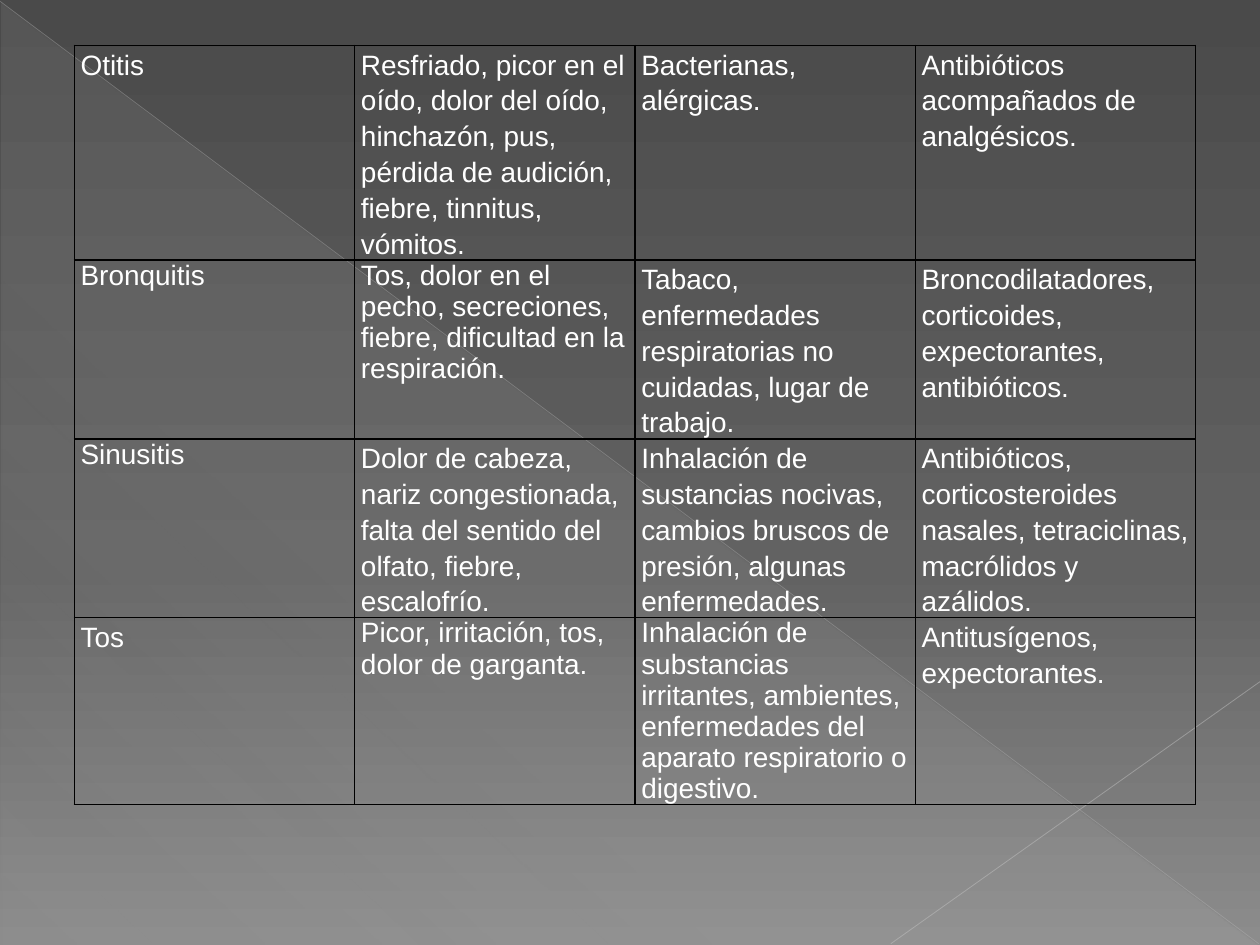
from pptx import Presentation
from pptx.dml.color import RGBColor
from pptx.enum.shapes import MSO_CONNECTOR, MSO_SHAPE
from pptx.oxml import parse_xml
from pptx.oxml.ns import nsdecls, qn
from pptx.util import Inches, Pt
from lxml.etree import SubElement

COLORS = {
    "top": "4A4A4A",
    "middle": "626262",
    "bottom": "8C8C8C",
    "sheen": "D2D2D2",
    "diagonal": "BFBFBF",
    "corner": "C6C6C6",
    "border": "000000",
    "text": "FFFFFF",
}
FONT = "Arial"
LOOSE = 1.15
SINGLE = 1.0

ROWS = [
    (1.7, [
        ("Otitis", LOOSE),
        ("Resfriado, picor en el oído, dolor del oído, hinchazón, pus, pérdida de audición, "
         "fiebre, tinnitus, vómitos.", LOOSE),
        ("Bacterianas, alérgicas.", LOOSE),
        ("Antibióticos acompañados de analgésicos.", LOOSE),
    ]),
    (1.42, [
        ("Bronquitis", SINGLE),
        ("Tos, dolor en el pecho, secreciones, fiebre, dificultad en la respiración.", SINGLE),
        ("Tabaco, enfermedades respiratorias no cuidadas, lugar de trabajo.", LOOSE),
        ("Broncodilatadores, corticoides, expectorantes, antibióticos.", LOOSE),
    ]),
    (1.42, [
        ("Sinusitis", SINGLE),
        ("Dolor de cabeza, nariz congestionada, falta del sentido del olfato, fiebre, "
         "escalofrío.", LOOSE),
        ("Inhalación de sustancias nocivas, cambios bruscos de presión, algunas "
         "enfermedades.", LOOSE),
        ("Antibióticos, corticosteroides nasales, tetraciclinas, macrólidos y azálidos.", LOOSE),
    ]),
    (1.48, [
        ("Tos", LOOSE),
        ("Picor, irritación, tos, dolor de garganta.", SINGLE),
        ("Inhalación de substancias irritantes, ambientes, enfermedades del aparato "
         "respiratorio o digestivo.", SINGLE),
        ("Antitusígenos, expectorantes.", LOOSE),
    ]),
]


def set_gradient(properties, stops, angle):
    """Replace the solid fill in properties by a linear gradient of (position, color, opacity)."""
    stop_xml = "".join(
        f'<a:gs pos="{position * 1000}"><a:srgbClr val="{COLORS[color]}">'
        f'<a:alpha val="{opacity * 1000}"/></a:srgbClr></a:gs>'
        for position, color, opacity in stops
    )
    gradient = parse_xml(
        f'<a:gradFill {nsdecls("a")} rotWithShape="1"><a:gsLst>{stop_xml}</a:gsLst>'
        f'<a:lin ang="{angle * 60000}" scaled="0"/></a:gradFill>'
    )
    properties.replace(properties.find(qn("a:solidFill")), gradient)


def add_background(slide):
    """Shade the slide from dark at the top to light at the bottom."""
    slide.background.fill.solid()
    properties = slide.element.find(".//" + qn("p:bgPr"))
    set_gradient(properties, [(0, "top", 100), (60, "middle", 100), (100, "bottom", 100)], 90)


def add_sheen(slide, left, top, width, height):
    """Add the faint triangle that fills the lower left half of the box."""
    triangle = slide.shapes.add_shape(
        MSO_SHAPE.RIGHT_TRIANGLE, Inches(left), Inches(top), Inches(width), Inches(height)
    )
    triangle.shadow.inherit = False
    triangle.line.fill.background()
    triangle.fill.solid()
    set_gradient(
        triangle.element.spPr, [(0, "sheen", 10), (70, "sheen", 8), (100, "sheen", 1)], 133
    )


def add_hairline(slide, start, end, color, width, opacity):
    """Draw a thin translucent line from start to end."""
    line = slide.shapes.add_connector(
        MSO_CONNECTOR.STRAIGHT, *(Inches(value) for value in (*start, *end))
    )
    line.line.width = Pt(width)
    line.line.color.rgb = RGBColor.from_string(COLORS[color])
    properties = line.element.spPr
    color_element = properties.find(".//" + qn("a:srgbClr"))
    SubElement(color_element, qn("a:alpha"), val=str(opacity * 1000))
    SubElement(properties, qn("a:effectLst"))


def write_text(text_frame, text, size=16, color="text", spacing=SINGLE):
    """Write one formatted paragraph into the text frame."""
    paragraph = text_frame.paragraphs[0]
    paragraph.line_spacing = spacing
    run = paragraph.add_run()
    run.text = text
    run.font.name = FONT
    run.font.size = Pt(size)
    run.font.bold = False
    run.font.color.rgb = RGBColor.from_string(COLORS[color])


def set_borders(cell, color="border", width=1):
    """Draw all four borders of the cell."""
    properties = cell._tc.get_or_add_tcPr()
    for index, side in enumerate(("lnL", "lnR", "lnT", "lnB")):
        border = parse_xml(
            f'<a:{side} {nsdecls("a")} w="{Pt(width)}"><a:solidFill>'
            f'<a:srgbClr val="{COLORS[color]}"/></a:solidFill><a:prstDash val="solid"/></a:{side}>'
        )
        properties.insert(index, border)


def add_disease_table(slide, left, top, width):
    """Add the table of diseases, symptoms, causes and treatments."""
    column_count = len(ROWS[0][1])
    height = sum(row_height for row_height, _ in ROWS)
    table = slide.shapes.add_table(
        len(ROWS), column_count, Inches(left), Inches(top), Inches(width), Inches(height)
    ).table
    table.first_row = False
    table.horz_banding = False
    for column in table.columns:
        column.width = Inches(width / column_count)
    for row, (row_height, entries) in zip(table.rows, ROWS):
        row.height = Inches(row_height)
        for cell, (text, spacing) in zip(row.cells, entries):
            cell.margin_left = cell.margin_right = Inches(0.05)
            cell.margin_top = cell.margin_bottom = 0
            cell.fill.background()
            set_borders(cell)
            write_text(cell.text_frame, text, spacing=spacing)


def main():
    """Build the slide and save it."""
    presentation = Presentation()
    presentation.slide_width = Inches(10)
    presentation.slide_height = Inches(7.5)
    slide = presentation.slides.add_slide(presentation.slide_layouts[6])
    add_background(slide)
    add_sheen(slide, 0.01, 0.02, 9.98, 7.48)
    add_hairline(slide, (0, 0.01), (9.99, 7.49), "diagonal", 0.39, 35)
    add_hairline(slide, (10, 5.41), (7.07, 7.49), "corner", 0.47, 45)
    add_disease_table(slide, 0.59, 0.36, 8.9)
    presentation.save("out.pptx")


if __name__ == "__main__":
    main()
